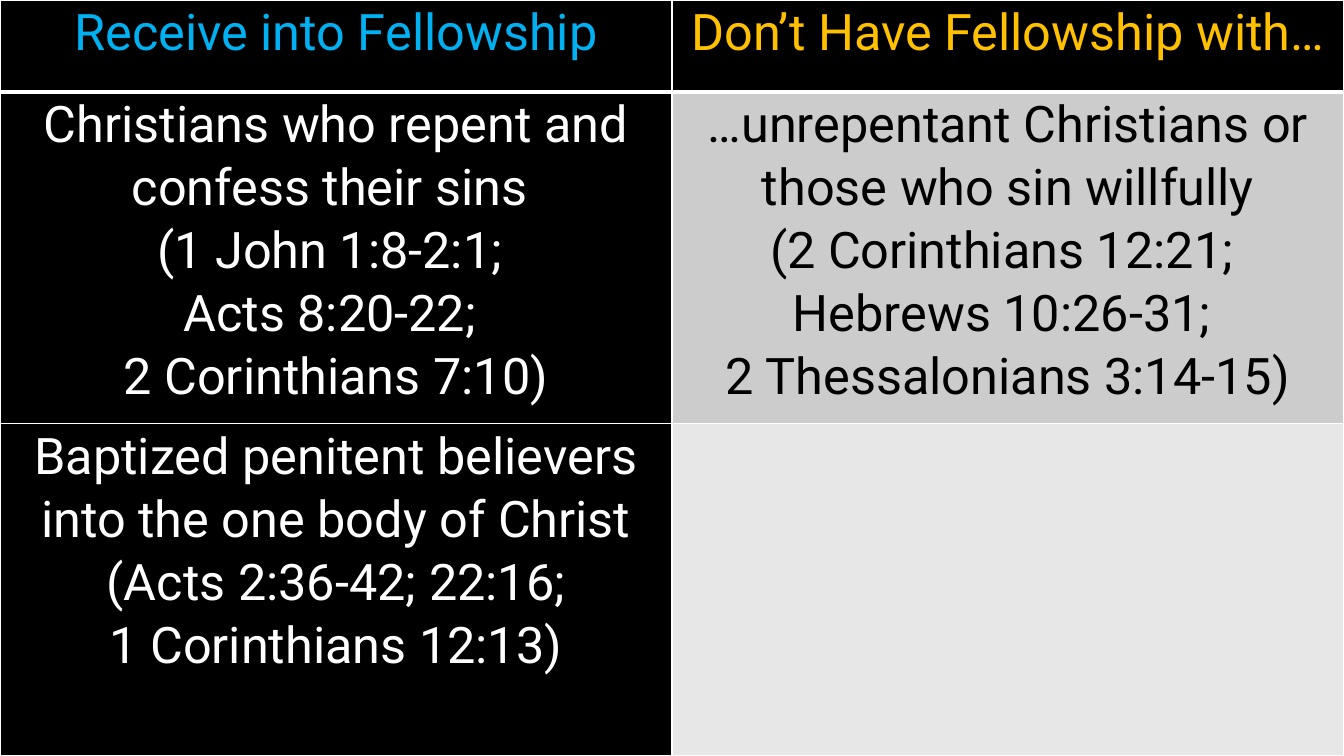
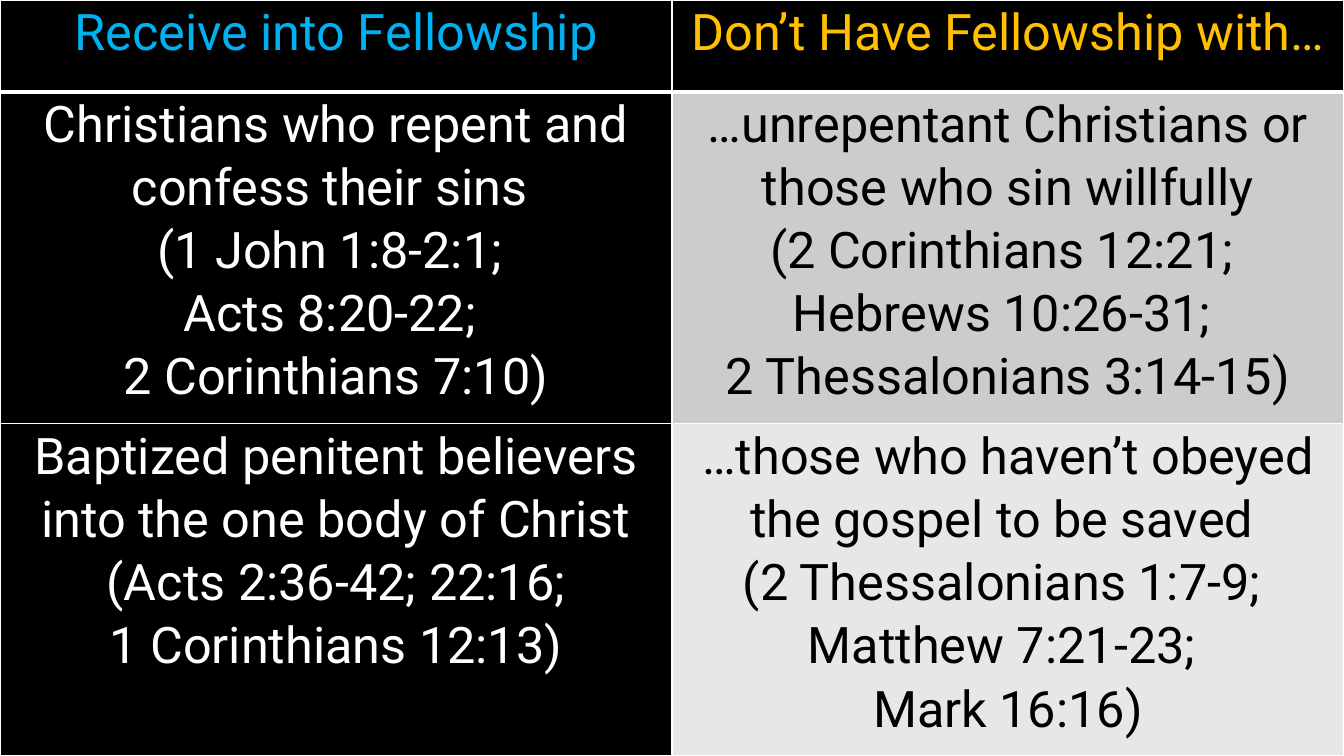
from dataclasses import dataclass

from lxml import etree
from pptx import Presentation
from pptx import util as u
from pptx.dml.color import RGBColor
from pptx.enum import text
from pptx.oxml import ns


@dataclass(frozen=True)
class Theme:
    font: str = "Roboto"
    size: int = 36
    line_spacing: float = 1.07
    black: str = "000000"
    white: str = "FFFFFF"
    blue: str = "00B0F0"
    gold: str = "FFC000"
    dark_band: str = "CCCCCC"
    light_band: str = "E7E7E7"
    thin: int = 1
    thick: int = 3


THEME = Theme()
WIDTH, HEIGHT, HEADER_HEIGHT = 13.33, 7.5, 0.91

HEADINGS = (["Receive into Fellowship"], ["Don’t Have Fellowship with…"])
REPENTANT = [
    "Christians who repent and confess their sins ",
    "(1 John 1:8-2:1; ",
    "Acts 8:20-22; ",
    "2 Corinthians 7:10)",
]
UNREPENTANT = [
    "…unrepentant Christians or those who sin willfully",
    "(2 Corinthians 12:21; ",
    "Hebrews 10:26-31; ",
    "2 Thessalonians 3:14-15)",
]
BAPTIZED = [
    "Baptized penitent believers into the one body of Christ (Acts 2:36-42; 22:16;",
    "1 Corinthians 12:13)",
]
DISOBEDIENT = [
    "…those who haven’t obeyed the gospel to be saved ",
    "(2 Thessalonians 1:7-9; ",
    "Matthew 7:21-23; ",
    "Mark 16:16)",
]

STYLES = (
    ((THEME.black, THEME.blue), (THEME.black, THEME.gold)),
    ((THEME.black, THEME.white), (THEME.dark_band, THEME.black)),
    ((THEME.black, THEME.white), (THEME.light_band, THEME.black)),
)


def paint(fill, color):
    fill.solid()
    fill.fore_color.rgb = RGBColor.from_string(color)


def set_border(cell, side, points):
    properties = cell._tc.get_or_add_tcPr()
    line = etree.SubElement(properties, ns.qn(f"a:ln{side}"), w=str(u.Pt(points)))
    solid = etree.SubElement(line, ns.qn("a:solidFill"))
    etree.SubElement(solid, ns.qn("a:srgbClr"), val=THEME.white)


def write_paragraphs(cell, lines, color):
    frame = cell.text_frame
    for index, line in enumerate(lines):
        para = frame.add_paragraph() if index else frame.paragraphs[0]
        para.alignment = text.PP_ALIGN.CENTER
        para.line_spacing = THEME.line_spacing
        span = para.add_run()
        span.text = line
        span.font.name = THEME.font
        span.font.size = u.Pt(THEME.size)
        span.font.color.rgb = RGBColor.from_string(color)


def format_cell(cell, row, lines, style):
    fill, color = style
    cell.margin_left = cell.margin_right = u.Inches(0.07)
    cell.margin_top = cell.margin_bottom = 0
    thick_side = {0: "B", 1: "T"}.get(row)
    for side in "LRTB":
        set_border(cell, side, THEME.thick if side == thick_side else THEME.thin)
    paint(cell.fill, fill)
    write_paragraphs(cell, lines, color)


def add_comparison(deck, rows):
    page = deck.slides.add_slide(deck.slide_layouts[6])
    paint(page.background.fill, THEME.black)
    frame = page.shapes.add_table(
        len(rows), 2, 0, 0, u.Inches(WIDTH), u.Inches(HEIGHT)
    )
    table = frame.table
    body_height = (HEIGHT - HEADER_HEIGHT) / (len(rows) - 1)
    for row, contents in enumerate(rows):
        table.rows[row].height = u.Inches(body_height if row else HEADER_HEIGHT)
        for column, lines in enumerate(contents):
            format_cell(table.cell(row, column), row, lines, STYLES[row][column])


def main():
    deck = Presentation()
    deck.slide_width, deck.slide_height = u.Inches(WIDTH), u.Inches(HEIGHT)
    for last_answer in ([], DISOBEDIENT):
        add_comparison(
            deck, (HEADINGS, (REPENTANT, UNREPENTANT), (BAPTIZED, last_answer))
        )
    deck.save("out.pptx")


if __name__ == "__main__":
    main()
